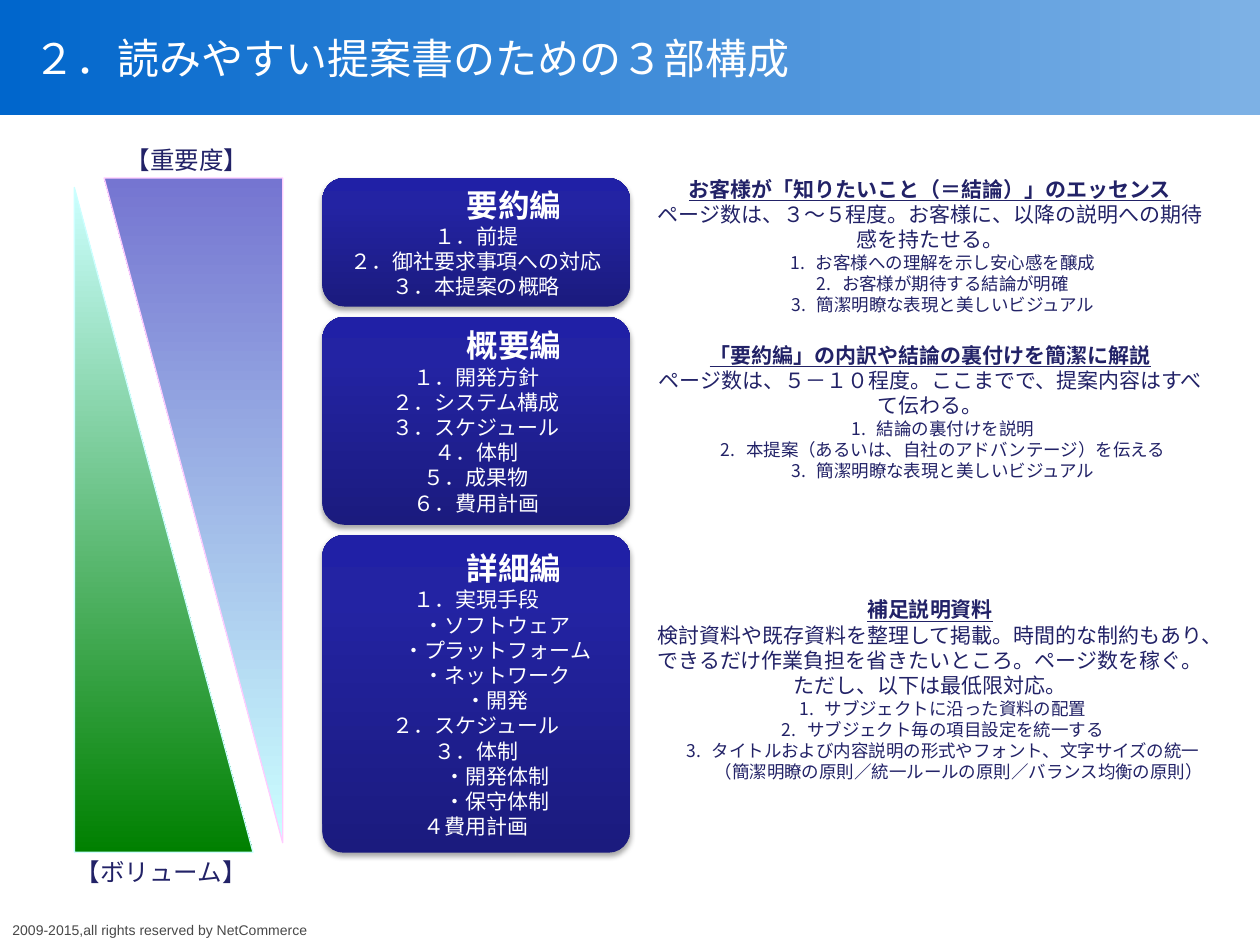
from dataclasses import dataclass, field

from lxml import etree
from pptx import Presentation
from pptx.dml.color import RGBColor
from pptx.enum import shapes, text
from pptx.oxml import ns
from pptx.util import Cm, Pt

WHITE = RGBColor(0xFF, 0xFF, 0xFF)
NAVY = RGBColor(0x22, 0x22, 0x67)
GRAY = RGBColor(0x48, 0x48, 0x48)
PINK = RGBColor(0xFF, 0xCC, 0xFF)
PALE_CYAN = RGBColor(0xCC, 0xFF, 0xFF)
GREEN = RGBColor(0x00, 0x80, 0x00)
VIOLET = RGBColor(0x75, 0x75, 0xD1)
BANNER_BLUE = RGBColor(0x00, 0x66, 0xCC)
BANNER_LIGHT = RGBColor(0x7D, 0xB1, 0xE5)
CARD_STOPS = ((0, RGBColor(0x1B, 0x1B, 0x7E)), (80, RGBColor(0x23, 0x23, 0xA3)),
              (100, RGBColor(0x20, 0x20, 0xA6)))

JAPANESE = "Noto Sans CJK JP"
CENTER = text.PP_ALIGN.CENTER
MIDDLE = text.MSO_ANCHOR.MIDDLE


@dataclass
class Line:
    text: str
    size: float = 12
    color: RGBColor = NAVY
    bold: bool = False
    underline: bool = False
    left: float = 0
    hanging: float = 0
    numbered: bool = False
    font: str = JAPANESE


@dataclass
class Card:
    heading: str
    height: float
    items: list[str]


@dataclass
class Note:
    top: float
    height: float
    heading: str
    body: str
    points: list[str]
    remark: list[str] = field(default_factory=list)


CARDS = [
    Card("要約編", 2.59, ["１．前提", "２．御社要求事項への対応", "３．本提案の概略"]),
    Card("概要編", 4.19, ["１．開発方針", "２．システム構成", "３．スケジュール",
                       "４．体制", "５．成果物", "６．費用計画"]),
    Card("詳細編", 6.4, ["１．実現手段", "・ソフトウェア", "・プラットフォーム",
                      "・ネットワーク", "・開発", "２．スケジュール", "３．体制",
                      "・開発体制", "・保守体制", "４費用計画"]),
]

NOTES = [
    Note(3.43, 3.07, "お客様が「知りたいこと（＝結論）」のエッセンス",
         "ページ数は、３～５程度。お客様に、以降の説明への期待感を持たせる。",
         ["お客様への理解を示し安心感を醸成", "お客様が期待する結論が明確",
          "簡潔明瞭な表現と美しいビジュアル"]),
    Note(6.78, 3.07, "「要約編」の内訳や結論の裏付けを簡潔に解説",
         "ページ数は、５－１０程度。ここまでで、提案内容はすべて伝わる。",
         ["結論の裏付けを説明", "本提案（あるいは、自社のアドバンテージ）を伝える",
          "簡潔明瞭な表現と美しいビジュアル"]),
    Note(11.91, 4.01, "補足説明資料",
         "検討資料や既存資料を整理して掲載。時間的な制約もあり、できるだけ作業負担を"
         "省きたいところ。ページ数を稼ぐ。ただし、以下は最低限対応。",
         ["サブジェクトに沿った資料の配置", "サブジェクト毎の項目設定を統一する",
          "タイトルおよび内容説明の形式やフォント、文字サイズの統一"],
         ["（簡潔明瞭の原則／統一ルールの原則／バランス均衡の原則）"]),
]


def add_element(parent, tag: str, **attributes):
    return etree.SubElement(parent, ns.qn(tag), {k: str(v) for k, v in attributes.items()})


def set_gradient(shape, stops, angle: int) -> None:
    """Fill with (percent, colour) stops; the angle runs clockwise in degrees."""
    shape.fill.background()
    old = shape._element.spPr.find(ns.qn("a:noFill"))
    gradient = etree.Element(ns.qn("a:gradFill"), rotWithShape="1")
    stop_list = add_element(gradient, "a:gsLst")
    for percent, color in stops:
        stop = add_element(stop_list, "a:gs", pos=percent * 1000)
        add_element(stop, "a:srgbClr", val=color)
    add_element(gradient, "a:lin", ang=angle * 60000, scaled=0)
    old.getparent().replace(old, gradient)


def set_shadow(shape) -> None:
    effects = shape._element.spPr.find(ns.qn("a:effectLst"))
    shadow = add_element(effects, "a:outerShdw", blurRad=Pt(3.1), dist=Pt(1.8),
                         dir=90 * 60000, rotWithShape=0)
    color = add_element(shadow, "a:srgbClr", val="000000")
    add_element(color, "a:alpha", val=35000)


def add_block(slide, kind, box, stops, angle: int, line_color=None):
    shape = slide.shapes.add_shape(kind, *map(Cm, box))
    shape.shadow.inherit = False
    set_gradient(shape, stops, angle)
    if line_color is None:
        shape.line.fill.background()
    else:
        shape.line.color.rgb = line_color
        shape.line.width = Pt(0.75)
    return shape


def write_lines(frame, lines: list[Line], align=CENTER, anchor=text.MSO_ANCHOR.TOP,
                wrap: bool = True) -> None:
    frame.word_wrap = wrap
    frame.vertical_anchor = anchor
    for index, line in enumerate(lines):
        paragraph = frame.add_paragraph() if index else frame.paragraphs[0]
        paragraph.alignment = align
        properties = paragraph._p.get_or_add_pPr()
        properties.set("marL", str(Cm(line.left)))
        properties.set("indent", str(-Cm(line.hanging)))
        if line.numbered:
            add_element(properties, "a:buFont", typeface=JAPANESE)
            add_element(properties, "a:buAutoNum", type="arabicPeriod")
        run = paragraph.add_run()
        run.text = line.text
        formats = {"size": Pt(line.size), "bold": line.bold,
                   "underline": line.underline, "name": line.font}
        for name, value in formats.items():
            setattr(run.font, name, value)
        run.font.color.rgb = line.color
        add_element(run._r.get_or_add_rPr(), "a:ea", typeface=JAPANESE)


def add_text(slide, box, lines: list[Line], **options) -> None:
    write_lines(slide.shapes.add_textbox(*map(Cm, box)).text_frame, lines, **options)


def add_card(slide, card: Card, top: float) -> None:
    shape = add_block(slide, shapes.MSO_SHAPE.ROUNDED_RECTANGLE,
                      (6.5, top, 6.2, card.height), CARD_STOPS, 270)
    shape.adjustments[0] = 0.44 / card.height
    set_shadow(shape)
    lines = [Line(card.heading, 18, WHITE, bold=True, left=1.53)]
    lines += [Line(item, color=WHITE, left=0.85 if item.startswith("・") else 0)
              for item in card.items]
    write_lines(shape.text_frame, lines, anchor=MIDDLE)


def add_note(slide, note: Note) -> None:
    lines = [Line(note.heading, bold=True, underline=True), Line(note.body)]
    lines += [Line(point, 10, left=1.02, hanging=0.51, numbered=True)
              for point in note.points]
    lines += [Line(remark, 10, left=1.15) for remark in note.remark]
    add_text(slide, (12.95, note.top, 11.6, note.height), lines)


def main() -> None:
    presentation = Presentation()
    presentation.slide_width, presentation.slide_height = Cm(25.4), Cm(19.05)
    slide = presentation.slides.add_slide(presentation.slide_layouts[6])

    add_block(slide, shapes.MSO_SHAPE.RECTANGLE, (0, 0, 25.4, 2.32),
              ((0, BANNER_BLUE), (100, BANNER_LIGHT)), 0)
    add_text(slide, (0.43, 0.43, 22.86, 1.47),
             [Line("２．読みやすい提案書のための３部構成", 24, WHITE, font="Arial")],
             align=text.PP_ALIGN.LEFT, anchor=MIDDLE)
    add_text(slide, (0, 18.45, 6.53, 0.6),
             [Line("2009-2015,all rights reserved by NetCommerce", 8, GRAY, font="Arial")],
             align=text.PP_ALIGN.LEFT, wrap=False)

    top, gap = 3.59, 0.21
    for card in CARDS:
        add_card(slide, card, top)
        top += card.height + gap

    triangle = shapes.MSO_SHAPE.RIGHT_TRIANGLE
    add_block(slide, triangle, (1.5, 3.78, 3.6, 13.4),
              ((0, PALE_CYAN), (100, GREEN)), 90, PALE_CYAN)
    importance = add_block(slide, triangle, (2.1, 3.59, 3.6, 13.4),
                           ((0, PALE_CYAN), (100, VIOLET)), 90, PINK)
    for flip in ("flipH", "flipV"):
        importance._element.spPr.xfrm.set(flip, "1")

    for label, left, label_top in (("【重要度】", 1.79, 2.79), ("【ボリューム】", 1.27, 17.15)):
        add_text(slide, (left, label_top, 3.96, 0.84), [Line(label, 14)], wrap=False)
    for note in NOTES:
        add_note(slide, note)
    presentation.save("out.pptx")


if __name__ == "__main__":
    main()
